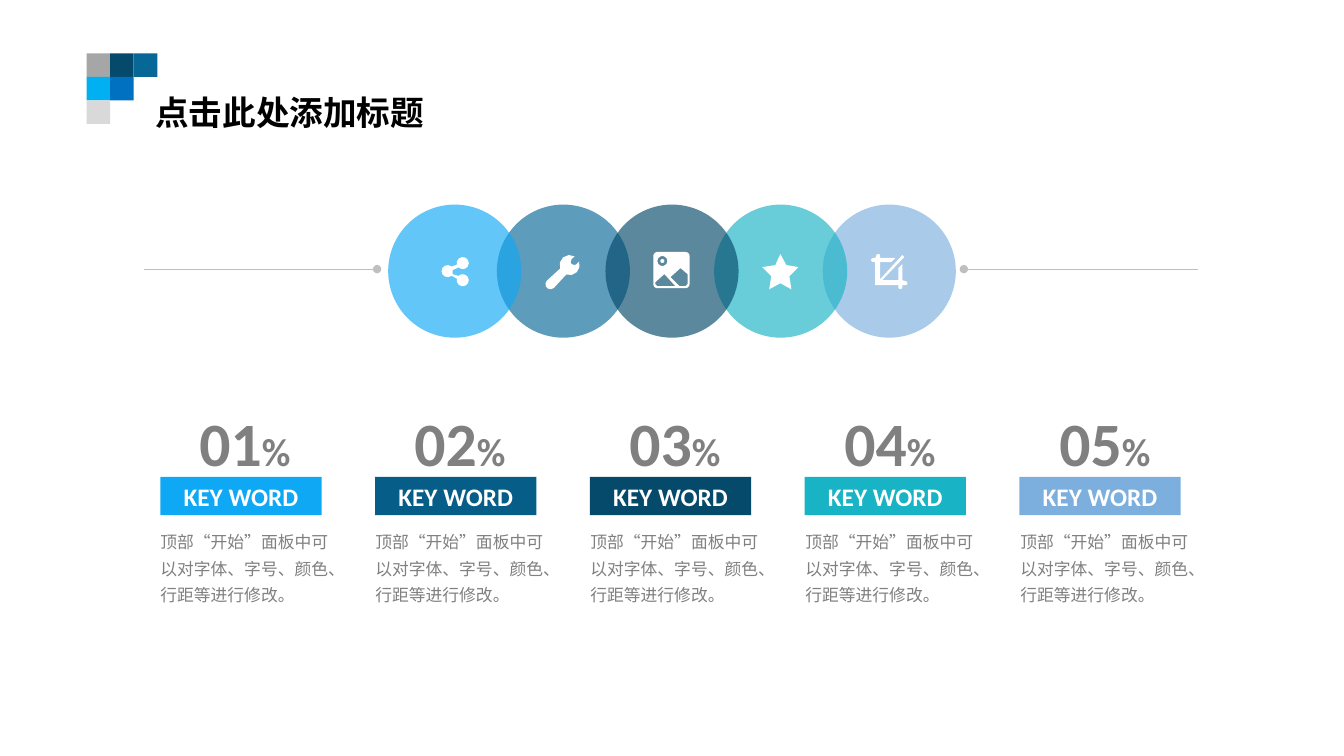
from dataclasses import dataclass
from math import ceil, cos, radians, sin

from lxml.etree import SubElement
from pptx import Presentation
from pptx.dml.color import RGBColor
from pptx.enum.shapes import MSO_CONNECTOR, MSO_SHAPE
from pptx.enum.text import MSO_ANCHOR, MSO_AUTO_SIZE, PP_ALIGN
from pptx.oxml.ns import qn
from pptx.util import Inches, Pt


@dataclass(frozen=True)
class Theme:
    latin: str = "Calibri"
    chinese: str = "Noto Sans CJK SC"
    black: str = "000000"
    white: str = "FFFFFF"
    grey: str = "808080"
    rule: str = "BFBFBF"
    circles: tuple = ("0FA8F5", "076797", "05496B", "18B3C4", "7CAFDE")
    bars: tuple = ("0FA8F5", "065D88", "05496B", "18B3C4", "7CAFDE")
    mosaic: tuple = (("A6A6A6", "05496B", "076797"), ("00B0F0", "0070C0"), ("D9D9D9",))
    title_size: int = 24
    number_size: int = 44
    percent_size: int = 28
    keyword_size: int = 18
    body_size: int = 12


theme = Theme()


def add_run(para, text, font_name, size, color, bold=False):
    run = para.add_run()
    run.text = text
    run.font.name = font_name
    run.font.size = Pt(size)
    run.font.bold = bold
    run.font.color.rgb = RGBColor.from_string(color)
    SubElement(run.font._element, qn("a:ea")).set("typeface", font_name)


def arc(x, y, radius, start, end):
    """Return points along an arc; angles in degrees, clockwise from the right."""
    steps = ceil(abs(end - start) / 36)
    angles = [radians(start + (end - start) * step / steps) for step in range(steps + 1)]
    return [(x + radius * cos(angle), y + radius * sin(angle)) for angle in angles]


# Each icon is a list of closed contours; inner contours cut holes.
share_icon = [
    arc(4.59, 2.61, 0.06, 165, 495) + [(4.49, 2.68), (4.49, 2.72)]
    + arc(4.59, 2.78, 0.06, 225, 555) + arc(4.44, 2.69, 0.06, 50, 310)
]
wrench_icon = [
    arc(5.65, 2.63, 0.1, 300, 160) + arc(5.46, 2.82, 0.05, 225, 45)
    + arc(5.65, 2.63, 0.1, 110, -20)
    + [(5.72, 2.62), (5.7, 2.63), (5.67, 2.62), (5.66, 2.6), (5.67, 2.57)]
]
image_icon = [
    arc(6.52, 2.54, 0.04, 180, 270) + arc(6.8, 2.54, 0.04, 270, 360)
    + arc(6.8, 2.82, 0.04, 0, 90) + arc(6.52, 2.82, 0.04, 90, 180),
    arc(6.57, 2.59, 0.05, 0, 324),
    arc(6.57, 2.59, 0.02, 0, 324),
    [(6.5, 2.8), (6.59, 2.72), (6.7, 2.84), (6.52, 2.84), (6.5, 2.82)],
    [(6.65, 2.75), (6.75, 2.66), (6.82, 2.72), (6.82, 2.82), (6.8, 2.84), (6.74, 2.84)],
]
star_icon = [[
    (7.92, 2.65), (7.8, 2.63), (7.74, 2.52), (7.69, 2.63), (7.56, 2.65),
    (7.65, 2.74), (7.63, 2.87), (7.74, 2.81), (7.85, 2.87), (7.83, 2.74),
]]
crop_icon = [
    [(8.95, 2.78), (8.95, 2.62), (8.91, 2.66), (8.91, 2.78), (8.75, 2.78),
     (8.97, 2.55), (8.95, 2.53), (8.73, 2.77), (8.73, 2.6), (8.84, 2.6),
     (8.88, 2.56), (8.73, 2.56)]
    + arc(8.71, 2.54, 0.02, 0, -180) + [(8.68, 2.56)]
    + arc(8.66, 2.58, 0.02, 270, 90) + [(8.68, 2.6), (8.68, 2.83), (8.91, 2.83)]
    + arc(8.93, 2.85, 0.02, 180, 0) + [(8.95, 2.83)]
    + arc(8.98, 2.81, 0.02, 90, -90)
]

deck = Presentation()
deck.slide_width, deck.slide_height = Inches(13.33), Inches(7.5)
page = deck.slides.add_slide(deck.slide_layouts[5])
shapes = page.shapes
painted = []

# Lines either side of the circles, each ending in a dot
for outer, inner in ((11.88, 9.56), (1.43, 3.74)):
    line = shapes.add_connector(
        MSO_CONNECTOR.STRAIGHT, Inches(outer), Inches(2.67), Inches(inner), Inches(2.67)
    )
    line.line.color.rgb = RGBColor.from_string(theme.rule)
    line.line.width = Pt(0.5)
    properties = line._element.spPr
    SubElement(properties.find(qn("a:ln")), qn("a:tailEnd")).set("type", "oval")
    SubElement(properties, qn("a:effectLst"))

# Overlapping circles, the middle one in front
circle_pitch = (8.16 - 3.85) / 4
for position in (1, 0, 4, 3, 2):
    circle = shapes.add_shape(
        MSO_SHAPE.OVAL, Inches(3.85 + circle_pitch * position), Inches(2.03),
        Inches(1.32), Inches(1.32)
    )
    painted.append((circle, theme.circles[position], 65))

for contours in (image_icon, wrench_icon, star_icon, crop_icon, share_icon):
    outlines = [[(Inches(x), Inches(y)) for x, y in contour] for contour in contours]
    builder = shapes.build_freeform(*outlines[0][0])
    builder.add_line_segments(outlines[0][1:])
    for outline in outlines[1:]:
        builder.move_to(*outline[0])
        builder.add_line_segments(outline[1:])
    painted.append((builder.convert_to_shape(), theme.white, 100))

# Five columns: number, keyword bar, description
text_pitch = (10.43 - 1.9) / 4
for column, bar_color in enumerate(theme.bars):
    offset = text_pitch * column
    bar = shapes.add_shape(
        MSO_SHAPE.RECTANGLE, Inches(1.59 + 2.13 * column), Inches(4.73), Inches(1.6), Inches(0.38)
    )
    painted.append((bar, bar_color, 100))
    description = shapes.add_textbox(Inches(1.52 + offset), Inches(5.18), Inches(1.83), Inches(0.86))
    number = shapes.add_textbox(Inches(1.9 + offset), Inches(3.98), Inches(1.06), Inches(0.82))
    for box in (bar, description, number):
        frame = box.text_frame
        frame.margin_left = frame.margin_right = Inches(0.07)
        frame.margin_top = frame.margin_bottom = Inches(0.04)
        frame.word_wrap = box is not number
        frame.auto_size = MSO_AUTO_SIZE.SHAPE_TO_FIT_TEXT
        frame.paragraphs[0].alignment = PP_ALIGN.LEFT if box is description else PP_ALIGN.CENTER

    add_run(bar.text_frame.paragraphs[0], "KEY WORD", theme.latin,
            theme.keyword_size, theme.white, True)
    para = description.text_frame.paragraphs[0]
    para.line_spacing = 1.3
    add_run(para, "顶部“开始”面板中可以对字体、字号、颜色、行距等进行修改。",
            theme.chinese, theme.body_size, theme.grey)
    para = number.text_frame.paragraphs[0]
    add_run(para, f"{column + 1:02}", theme.latin, theme.number_size, theme.grey, True)
    add_run(para, "%", theme.latin, theme.percent_size, theme.grey, True)

# Stepped mosaic beside the title
mosaic = shapes.add_group_shape()
square_side = 0.7 / 3
for row, colors in enumerate(theme.mosaic):
    for column, color in enumerate(colors):
        square = mosaic.shapes.add_shape(
            MSO_SHAPE.RECTANGLE, Inches(0.86 + square_side * column),
            Inches(0.53 + square_side * row), Inches(square_side), Inches(square_side)
        )
        painted.append((square, color, 100))

for shape, color, opacity in painted:
    shape.shadow.inherit = False
    shape.line.fill.background()
    shape.fill.solid()
    shape.fill.fore_color.rgb = RGBColor.from_string(color)
    if opacity < 100:
        color_node = shape._element.spPr.find(qn("a:solidFill"))[0]
        SubElement(color_node, qn("a:alpha")).set("val", str(opacity * 1000))

title = shapes.title
title.left, title.top, title.width, title.height = (
    Inches(1.44), Inches(0.86), Inches(3.12), Inches(0.5)
)
title.text_frame.vertical_anchor = MSO_ANCHOR.TOP
title.text_frame.auto_size = MSO_AUTO_SIZE.SHAPE_TO_FIT_TEXT
para = title.text_frame.paragraphs[0]
para.alignment = PP_ALIGN.LEFT
add_run(para, "点击此处添加标题", theme.chinese, theme.title_size, theme.black, True)

deck.save("out.pptx")
